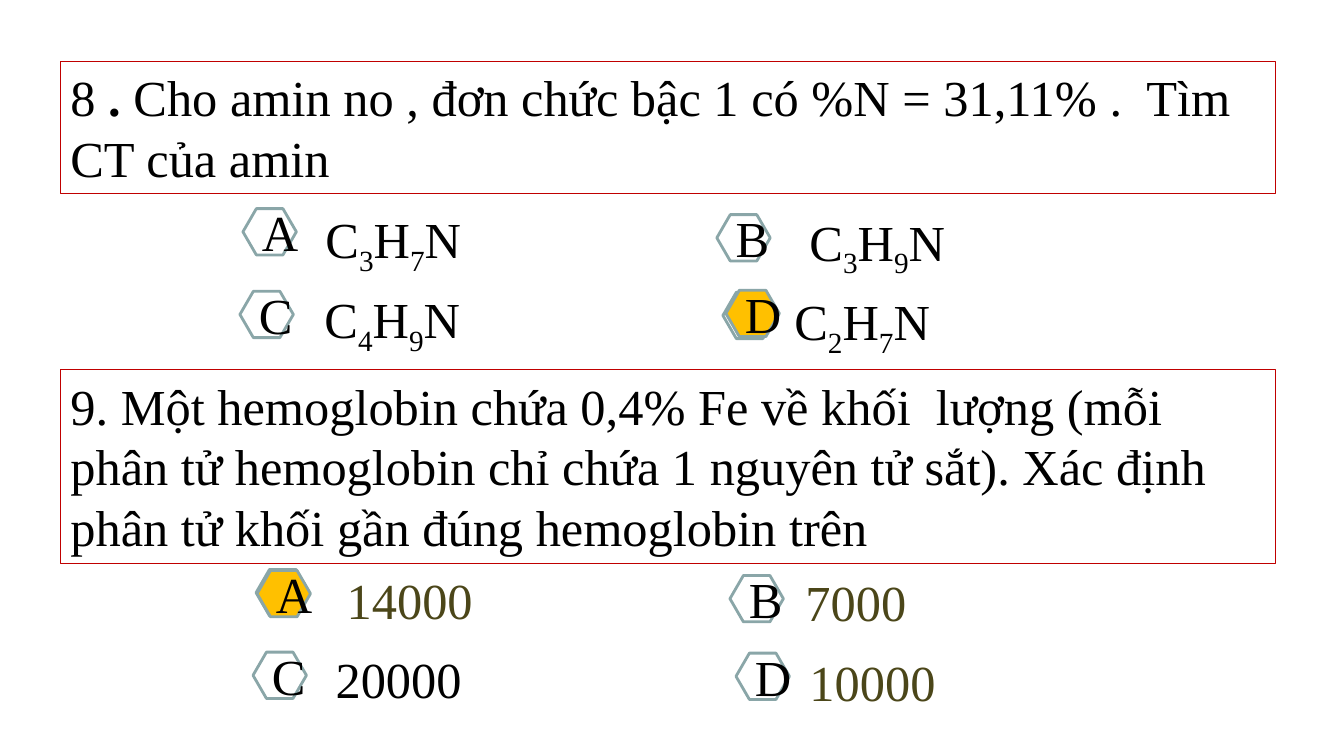
import lxml.etree
import pptx
import pptx.util
import pptx.dml.color
import pptx.enum.shapes
import pptx.enum.text
import pptx.oxml.ns

Inches = pptx.util.Inches
Pt = pptx.util.Pt
RGB = pptx.dml.color.RGBColor
SHAPE = pptx.enum.shapes.MSO_SHAPE
ALIGN = pptx.enum.text.PP_ALIGN
ANCHOR = pptx.enum.text.MSO_ANCHOR
qn = pptx.oxml.ns.qn

BLACK = RGB(0x00, 0x00, 0x00)
OLIVE = RGB(0x4B, 0x46, 0x19)
RED = RGB(0xC0, 0x00, 0x00)
GRAY = RGB(0x8A, 0xA6, 0xA8)
WHITE = RGB(0xFF, 0xFF, 0xFF)
GOLD = RGB(0xFF, 0xC0, 0x00)

deck = pptx.Presentation()
deck.slide_width = Inches(13.33)
deck.slide_height = Inches(7.5)
slide = deck.slides.add_slide(deck.slide_layouts[6])


def add_text(shape, parts, anchor, align, color=BLACK, gap=True):
    """Write parts, each (text, bold, sub), as runs of one paragraph."""
    frame = shape.text_frame
    frame.word_wrap = True
    frame.vertical_anchor = anchor
    para = frame.paragraphs[0]
    para.alignment = align
    if gap:
        # Space before: half a line
        space = lxml.etree.SubElement(para._p.get_or_add_pPr(), qn("a:spcBef"))
        lxml.etree.SubElement(space, qn("a:spcPct")).set("val", "50000")
    for text, bold, sub in parts:
        run = para.add_run()
        run.text = text
        run.font.name = "Times New Roman"
        run.font.size = Pt(36)
        run.font.bold = bold
        run.font.color.rgb = color
        if sub:
            run._r.get_or_add_rPr().set("baseline", "-25000")


def add_shape(kind, left, top, width, height, line, weight):
    shape = slide.shapes.add_shape(
        kind, Inches(left), Inches(top), Inches(width), Inches(height))
    shape.shadow.inherit = False
    shape.line.color.rgb = line
    shape.line.width = Pt(weight)
    return shape


# Questions: top, height, runs
asks = [
    (0.61, 1.31, [
        ("8 ", False, False), (". ", True, False),
        ("Cho amin no , đơn chức bậc 1 có %N = 31,11% .  Tìm CT của amin",
         False, False)]),
    (3.67, 1.92, [
        ("9. Một hemoglobin chứa 0,4% Fe về khối  lượng (mỗi phân tử hemoglobin "
         "chỉ chứa 1 nguyên tử sắt). Xác định phân tử khối gần đúng hemoglobin trên",
         False, False)]),
]
for top, height, parts in asks:
    box = add_shape(SHAPE.RECTANGLE, 0.6, top, 12.05, height, RED, 0.75)
    box.fill.background()
    add_text(box, parts, ANCHOR.TOP, ALIGN.LEFT)

# Answers: left, top, width, pieces, color; digits in a formula sit low
picks = [
    (3.13, 2.02, 1.96, ["C", "3", "H", "7", "N"], BLACK),
    (7.93, 2.04, 3.2, ["C", "3", "H", "9", "N"], BLACK),
    (3.12, 2.81, 4.2, ["C", "4", "H", "9", "N"], BLACK),
    (7.78, 2.83, 3.46, ["C", "2", "H", "7", "N"], BLACK),
    (3.34, 5.6, 3.2, ["14000"], OLIVE),
    (7.89, 5.62, 3.58, ["7000"], OLIVE),
    (3.23, 6.38, 2.8, ["20000"], BLACK),
    (7.93, 6.41, 3.46, ["10000"], OLIVE),
]
for left, top, width, pieces, color in picks:
    box = slide.shapes.add_textbox(
        Inches(left), Inches(top), Inches(width), Inches(0.71))
    parts = [(text, False, len(pieces) > 1 and text.isdigit()) for text in pieces]
    add_text(box, parts, ANCHOR.TOP, ALIGN.LEFT, color)

# Hexagon badges: the right answer has a gold one over a plain one
badges = [
    ("A", 2.41, 2.07, WHITE), ("B", 7.11, 2.13, WHITE),
    ("C", 2.38, 2.89, WHITE), ("", 7.17, 2.9, WHITE), ("D", 7.2, 2.88, GOLD),
    ("", 2.54, 5.65, WHITE), ("A", 2.55, 5.66, GOLD), ("B", 7.24, 5.71, WHITE),
    ("C", 2.51, 6.47, WHITE), ("D", 7.3, 6.48, WHITE),
]
for label, left, top, fill in badges:
    badge = add_shape(SHAPE.HEXAGON, left, top, 0.53, 0.46, GRAY, 2)
    badge.fill.solid()
    badge.fill.fore_color.rgb = fill
    badge.adjustments[0] = 0.29
    if label:
        add_text(badge, [(label, False, False)], ANCHOR.MIDDLE, ALIGN.CENTER,
                 gap=False)

deck.save("out.pptx")
